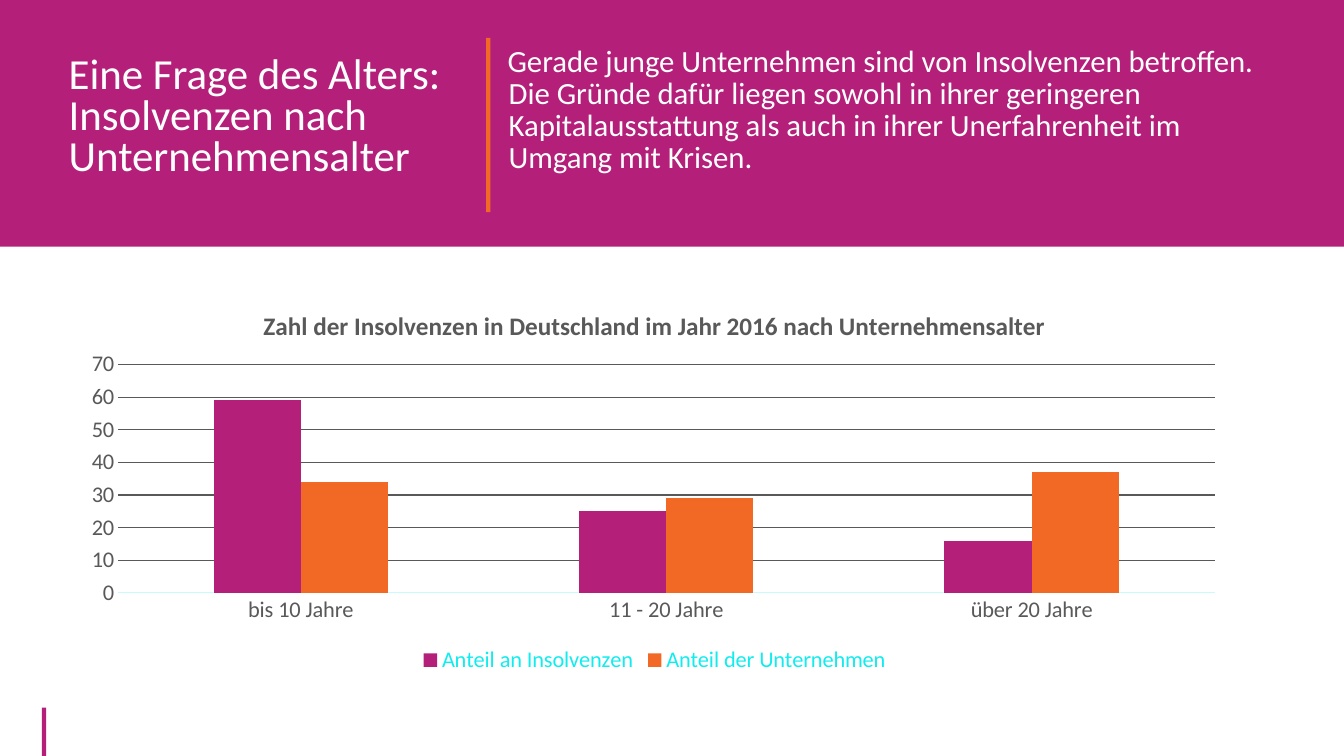
from dataclasses import dataclass

import lxml.etree
import pptx
import pptx.chart.data
import pptx.dml.color
import pptx.enum.chart
import pptx.enum.shapes
import pptx.oxml.ns
import pptx.util

PX = 9525


@dataclass(frozen=True)
class Theme:
    font: str = "Calibri"
    magenta: str = "B41F7A"
    orange: str = "F16924"
    white: str = "FFFFFF"
    grey: str = "595959"
    cyan: str = "11ECEE"
    pale_cyan: str = "C8FBFB"
    heading: float = 30.6
    body: float = 22
    chart_title: float = 18
    chart_label: float = 16


THEME = Theme()


def rgb(color):
    return pptx.dml.color.RGBColor.from_string(color)


def px(*lengths):
    return [pptx.util.Emu(n * PX) for n in lengths]


def style_font(font, size, color, bold=False):
    font.name = THEME.font
    font.size = pptx.util.Pt(size)
    font.bold = bold
    font.color.rgb = rgb(color)


def style_line(line, color):
    line.color.rgb = rgb(color)
    line.width = pptx.util.Pt(0.75)


def add_bar(slide, box, color):
    kind = pptx.enum.shapes.MSO_SHAPE.RECTANGLE
    sp = slide.shapes.add_shape(kind, *px(*box))
    sp.shadow.inherit = False
    sp.fill.solid()
    sp.fill.fore_color.rgb = rgb(color)
    sp.line.fill.background()


def add_text(slide, box, text, size, spacing):
    tf = slide.shapes.add_textbox(*px(*box)).text_frame
    tf.word_wrap = True
    p = tf.paragraphs[0]
    p.text = text
    p.line_spacing = spacing
    style_font(p.runs[0].font, size, THEME.white)
    return p


def place_plot(chart, **fractions):
    plot_area = chart.plots[0]._element.getparent()
    for layout in plot_area.findall(pptx.oxml.ns.qn("c:layout")):
        plot_area.remove(layout)
    layout = lxml.etree.Element(pptx.oxml.ns.qn("c:layout"))
    plot_area.insert(0, layout)
    manual = lxml.etree.SubElement(layout, pptx.oxml.ns.qn("c:manualLayout"))
    settings = {"layoutTarget": "inner", "xMode": "edge", "yMode": "edge", **fractions}
    for tag, value in settings.items():
        item = lxml.etree.SubElement(manual, pptx.oxml.ns.qn(f"c:{tag}"))
        item.set("val", str(value))


def style_axis(axis):
    axis.major_tick_mark = pptx.enum.chart.XL_TICK_MARK.NONE
    style_font(axis.tick_labels.font, THEME.chart_label, THEME.grey)


def add_column_chart(slide, box, title, categories, series):
    data = pptx.chart.data.CategoryChartData()
    data.categories = categories
    for name, values, _ in series:
        data.add_series(name, values)
    kind = pptx.enum.chart.XL_CHART_TYPE.COLUMN_CLUSTERED
    chart = slide.shapes.add_chart(kind, *px(*box), data).chart
    style_font(chart.font, THEME.chart_label, THEME.grey)

    p = chart.chart_title.text_frame.paragraphs[0]
    p.text = title
    style_font(p.runs[0].font, THEME.chart_title, THEME.grey, bold=True)
    chart.chart_title.include_in_layout = False

    chart.has_legend = True
    chart.legend.position = pptx.enum.chart.XL_LEGEND_POSITION.BOTTOM
    chart.legend.include_in_layout = False
    style_font(chart.legend.font, THEME.chart_label, THEME.cyan)

    style_axis(chart.category_axis)
    style_line(chart.category_axis.format.line, THEME.pale_cyan)
    axis = chart.value_axis
    style_axis(axis)
    axis.minimum_scale, axis.maximum_scale, axis.major_unit = 0, 70, 10
    axis.format.line.fill.background()
    style_line(axis.major_gridlines.format.line, THEME.grey)

    plot = chart.plots[0]
    plot.vary_by_categories = False
    plot.gap_width = 219
    plot.overlap = 0
    for columns, (_, _, color) in zip(plot.series, series):
        columns.format.fill.solid()
        columns.format.fill.fore_color.rgb = rgb(color)
    place_plot(chart, x=0.04, y=0.19, w=0.94, h=0.59)


def main():
    prs = pptx.Presentation()
    prs.slide_width, prs.slide_height = px(1280, 720)
    slide = prs.slides.add_slide(prs.slide_layouts[6])

    add_bar(slide, (40, 674, 4, 46), THEME.magenta)
    add_bar(slide, (0, 0, 1280, 235), THEME.magenta)
    add_bar(slide, (463, 36, 4, 166), THEME.orange)
    add_text(
        slide, (56, 49, 397, 154),
        "Eine Frage des Alters: Insolvenzen nach Unternehmensalter",
        THEME.heading, 0.8,
    )
    p = add_text(
        slide, (474, 40, 756, 135),
        "Gerade junge Unternehmen sind von Insolvenzen betroffen. "
        "Die Gründe dafür liegen sowohl in ihrer geringeren "
        "Kapitalausstattung als auch in ihrer Unerfahrenheit im "
        "Umgang mit Krisen.",
        THEME.body, pptx.util.Pt(22.8),
    )
    pPr = p._p.get_or_add_pPr()
    pPr.set("marL", str(PX))
    pPr.set("indent", str(-PX))
    add_column_chart(
        slide, (68, 277, 1111, 369),
        "Zahl der Insolvenzen in Deutschland im Jahr 2016 nach Unternehmensalter",
        ("bis 10 Jahre", "11 - 20 Jahre", "über 20 Jahre"),
        (
            ("Anteil an Insolvenzen", (59, 25, 16), THEME.magenta),
            ("Anteil der Unternehmen", (34, 29, 37), THEME.orange),
        ),
    )
    prs.save("out.pptx")


if __name__ == "__main__":
    main()
